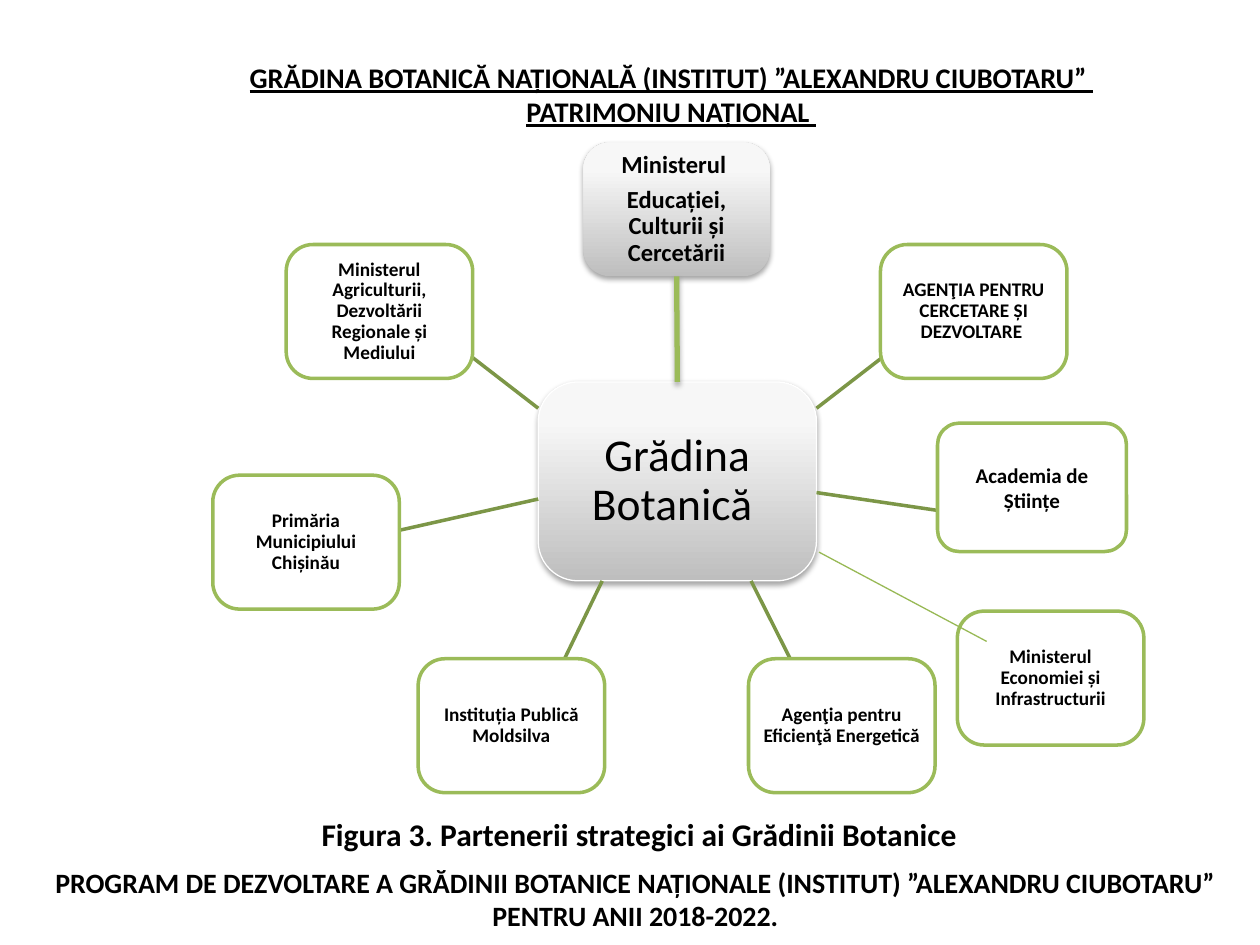
from lxml.etree import SubElement
from pptx import Presentation
from pptx.dml.color import RGBColor
from pptx.enum.shapes import MSO_CONNECTOR, MSO_SHAPE
from pptx.enum.text import MSO_ANCHOR, PP_ALIGN
from pptx.oxml.ns import qn
from pptx.util import Cm, Pt

GREEN, DARK_GREEN, THIN_GREEN = "9BBB59", "7C9647", "98B955"
BOX_W, BOX_H = 3.76, 2.7
HUB = (10.85, 7.7, 5.61, 4.01)

# Text, left, top, spoke start at the hub, spoke end at the partner
PARTNERS = [
    ("Ministerul Agriculturii, Dezvoltării Regionale și Mediului",
     5.77, 4.93, (10.85, 8.23), (9.53, 7.21)),
    ("Primăria Municipiului Chișinău",
     4.29, 9.58, (10.85, 10.06), (8.05, 10.69)),
    ("Instituția Publică Moldsilva",
     8.43, 13.28, (12.14, 11.71), (11.38, 13.28)),
    ("Agenţia pentru Eficienţă Energetică",
     15.09, 13.28, (15.14, 11.71), (15.93, 13.28)),
    ("AGENŢIA PENTRU CERCETARE ȘI DEZVOLTARE ",
     17.75, 4.93, (16.46, 8.23), (17.78, 7.21)),
]


def rgb(hex_color):
    return RGBColor.from_string(hex_color)


def add_shadow(sp):
    """Give a shape or connector a soft shadow straight below it."""
    sp_pr = sp._element.spPr
    for old in sp_pr.findall(qn("a:effectLst")):
        sp_pr.remove(old)
    effects = SubElement(sp_pr, qn("a:effectLst"))
    shadow = SubElement(effects, qn("a:outerShdw"), blurRad="40000",
                        dist="23000", dir="5400000", rotWithShape="0")
    color = SubElement(shadow, qn("a:srgbClr"), val="000000")
    SubElement(color, qn("a:alpha"), val="35000")


def set_text(sp, text, size, bold=True, underline=None, spacing=None,
             after=0, inset=None, anchor=MSO_ANCHOR.MIDDLE):
    """Write one centred paragraph per line; a vertical tab breaks a line."""
    tf = sp.text_frame
    tf.word_wrap = True
    tf.vertical_anchor = anchor
    if inset is not None:
        tf.margin_left = tf.margin_right = Cm(inset)
        tf.margin_top = tf.margin_bottom = Cm(inset)
    tf.text = text
    for p in tf.paragraphs:
        p.alignment = PP_ALIGN.CENTER
        p.line_spacing = spacing
        for r in p.runs:
            font = r.font
            font.name, font.size = "Calibri", Pt(size)
            font.bold, font.underline = bold, underline
            font.color.rgb = rgb("000000")
    for p in tf.paragraphs[:-1]:
        p.space_after = Pt(after)


def add_text(slide, text, left, top, width, height, **fmt):
    sp = slide.shapes.add_textbox(Cm(left), Cm(top), Cm(width), Cm(height))
    set_text(sp, text, anchor=MSO_ANCHOR.TOP, **fmt)


def add_round_box(slide, left, top, width, height, corner):
    sp = slide.shapes.add_shape(MSO_SHAPE.ROUNDED_RECTANGLE,
                                Cm(left), Cm(top), Cm(width), Cm(height))
    sp.adjustments[0] = corner
    sp.shadow.inherit = False
    return sp


def add_outlined_box(slide, text, left, top, width=BOX_W, height=BOX_H,
                     corner=0.2, **fmt):
    sp = add_round_box(slide, left, top, width, height, corner)
    sp.fill.solid()
    sp.fill.fore_color.rgb = rgb("FFFFFF")
    sp.line.color.rgb = rgb(GREEN)
    sp.line.width = Pt(2)
    set_text(sp, text, **fmt)


def add_gradient_box(slide, text, left, top, width, height, outline=None,
                     **fmt):
    sp = add_round_box(slide, left, top, width, height, 0.2)
    sp.fill.gradient()
    sp.fill.gradient_angle = 90
    for stop, color, position in zip(sp.fill.gradient_stops,
                                     ("BEBEBE", "F7F7F7"), (0, 0.8)):
        stop.color.rgb = rgb(color)
        stop.position = position
    if outline:
        sp.line.color.rgb = rgb(outline)
        sp.line.width = Pt(0.75)
    else:
        sp.line.fill.background()
    add_shadow(sp)
    set_text(sp, text, spacing=0.9, **fmt)
    return sp


def add_line(slide, start, end, color=DARK_GREEN, width=2):
    line = slide.shapes.add_connector(
        MSO_CONNECTOR.STRAIGHT, *(Cm(v) for v in (*start, *end)))
    line.line.color.rgb = rgb(color)
    line.line.width = Pt(width)
    SubElement(line._element.spPr, qn("a:effectLst"))
    return line


def add_title(slide, text):
    title = slide.shapes.title
    title.left, title.top = Cm(2.9), Cm(1.17)
    title.width, title.height = Cm(21.26), Cm(1.47)
    set_text(title, text, size=16.2, underline=True, inset=0)


def main():
    prs = Presentation()
    prs.slide_width, prs.slide_height = Cm(25.4), Cm(19.05)
    slide = prs.slides.add_slide(prs.slide_layouts[5])

    add_title(slide, "GRĂDINA BOTANICĂ NAȚIONALĂ (INSTITUT) "
                     "”ALEXANDRU CIUBOTARU” \vPATRIMONIU NAȚIONAL ")
    add_text(slide, "PROGRAM DE DEZVOLTARE A GRĂDINII BOTANICE NAȚIONALE "
                    "(INSTITUT) ”ALEXANDRU CIUBOTARU” PENTRU ANII 2018-2022.",
             0.71, 17.32, 24.2, 1.63, size=16)
    add_text(slide, "Figura 3. Partenerii strategici ai Grădinii Botanice",
             0.89, 16.3, 24, 1.02, size=18)

    hub = add_gradient_box(slide, "Grădina Botanică ", *HUB, outline="FFFFFF",
                           size=26, bold=False, inset=0.18)
    ministry = add_gradient_box(
        slide, "Ministerul \nEducației, Culturii și Cercetării",
        11.76, 2.87, BOX_W, BOX_H, size=14, after=5, inset=0.05)
    trunk = add_line(slide, (13.65, 7.7), (13.65, 5.57), GREEN, 3)
    trunk.begin_connect(hub, 0)
    trunk.end_connect(ministry, 2)
    add_shadow(trunk)

    small = dict(size=11, spacing=0.9, inset=0.05)
    for text, left, top, start, end in PARTNERS:
        add_line(slide, start, end)
        add_outlined_box(slide, text, left, top, **small)

    add_line(slide, (16.46, 9.93), (18.9, 10.29))
    add_outlined_box(slide, "Academia de Științe", 18.9, 8.53, 3.81, 2.59,
                     corner=0.17, size=12)
    add_outlined_box(slide, "Ministerul Economiei și Infrastructurii",
                     19.3, 12.32, **small)
    add_line(slide, (16.51, 11.13), (19.89, 12.93), THIN_GREEN, 0.75)

    prs.save("out.pptx")


if __name__ == "__main__":
    main()
